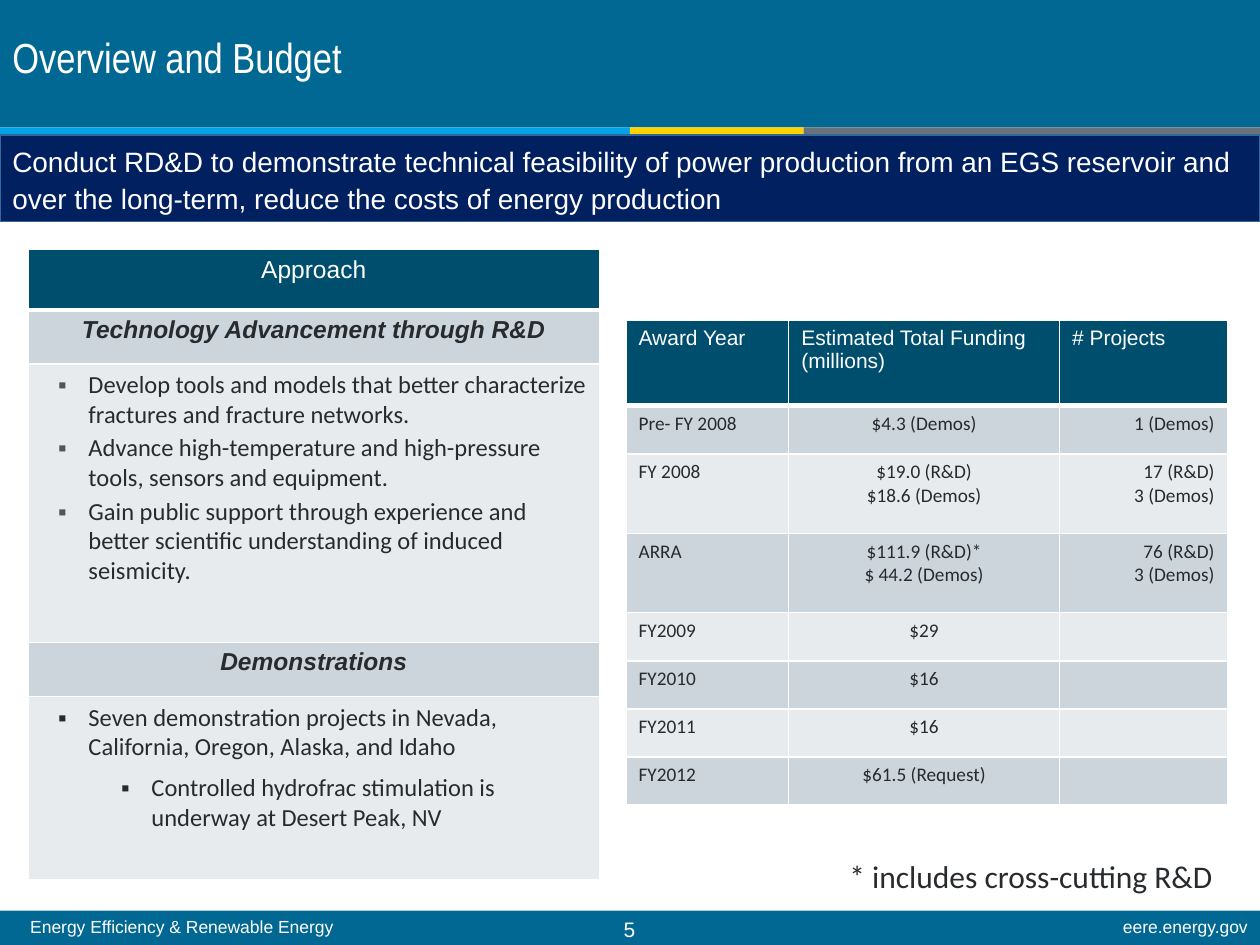
from lxml import etree
from pptx import Presentation
from pptx import util as u
from pptx.dml.color import RGBColor
from pptx.enum import shapes, text
from pptx.oxml.ns import qn

Cm, Pt = u.Cm, u.Pt
LEFT, CENTER, RIGHT = text.PP_ALIGN.LEFT, text.PP_ALIGN.CENTER, text.PP_ALIGN.RIGHT
WHITE, DARK, HEAD, BAND, PALE = "FFFFFF", "282B2E", "004E6E", "CCD4DC", "E7EBEE"


def color(value):
    return RGBColor.from_string(value)


def write(tf, lines, font, size, ink, align=LEFT, strong=False):
    tf.word_wrap = True
    for i, line in enumerate(lines):
        p = tf.paragraphs[0] if i == 0 else tf.add_paragraph()
        p.alignment = align
        if not line:
            p._p.get_or_add_endParaRPr().set("sz", str(size * 100))
            continue
        r = p.add_run()
        r.text = line
        r.font.name = font
        r.font.size = Pt(size)
        r.font.bold = r.font.italic = strong
        r.font.color.rgb = color(ink)


prs = Presentation()
prs.slide_width, prs.slide_height = Cm(25.4), Cm(19.05)
s = prs.slides.add_slide(prs.slide_layouts[6])

bars = [
    (0, 0, 25.4, 2.57, "006892"),
    (0, 18.36, 25.4, 0.69, "006892"),
    (0, 2.57, 12.7, 0.15, "00A4E4"),
    (12.7, 2.57, 3.5, 0.15, "FFD200"),
    (16.2, 2.57, 9.2, 0.15, "6A737B"),
    (0, 2.72, 25.4, 1.75, "002060"),
]
for x, y, w, h, fill in bars:
    sp = s.shapes.add_shape(shapes.MSO_SHAPE.RECTANGLE, Cm(x), Cm(y), Cm(w), Cm(h))
    sp.shadow.inherit = False
    sp.fill.solid()
    sp.fill.fore_color.rgb = color(fill)
    sp.line.fill.background()

sp.line.color.rgb = color("336699")
sp.line.width = Pt(0.75)
tf = sp.text_frame
tf.vertical_anchor = text.MSO_ANCHOR.TOP
write(tf, ["Conduct RD&D to demonstrate technical feasibility of power production from an EGS "
           "reservoir and over the long-term, reduce the costs of energy production"],
      "Arial", 16, WHITE)
tf.paragraphs[0].line_spacing = 1.1

labels = [
    (0, 0.15, 16.81, 2.03, "Overview and Budget", "Arial Narrow", 24, WHITE, LEFT, Pt(28)),
    (0.36, 18.39, 20.24, 0.66, "Energy Efficiency & Renewable Energy", "Arial", 10, WHITE, LEFT, 0.9),
    (15.21, 18.39, 10.19, 0.66, "eere.energy.gov", "Arial", 10, WHITE, RIGHT, 0.9),
    (9.73, 18.36, 5.92, 0.69, "5", "Arial", 12, WHITE, CENTER, 1.0),
    (16.81, 17.15, 7.95, 1.02, "* includes cross-cutting R&D", "Calibri", 18, DARK, CENTER, 1.0),
]
for x, y, w, h, line, font, size, ink, align, spacing in labels:
    tf = s.shapes.add_textbox(Cm(x), Cm(y), Cm(w), Cm(h)).text_frame
    write(tf, [line], font, size, ink, align)
    tf.paragraphs[0].line_spacing = spacing
    if size == 24:
        tf.vertical_anchor = text.MSO_ANCHOR.MIDDLE
    if size == 18:
        tf.word_wrap = False

approach = s.shapes.add_table(5, 1, Cm(0.56), Cm(5.03), Cm(11.53), Cm(12.7)).table
approach_rows = [
    (1.22, ["Approach"]),
    (1.09, ["Technology Advancement through R&D"]),
    (5.61, ["Develop tools and models that better characterize fractures and fracture networks.",
            "Advance high-temperature and high-pressure tools, sensors and equipment.",
            "Gain public support through experience and better scientific understanding of "
            "induced seismicity."]),
    (1.09, ["Demonstrations"]),
    (3.69, ["Seven demonstration projects in Nevada, California, Oregon, Alaska, and Idaho",
            "Controlled hydrofrac stimulation is underway at Desert Peak, NV"]),
]
for i, (height, lines) in enumerate(approach_rows):
    approach.rows[i].height = Cm(height)
    cell = approach.cell(i, 0)
    cell.margin_bottom = 0
    if i in (0, 1, 3):
        write(cell.text_frame, lines, "Arial", 14, DARK if i else WHITE, CENTER, i > 0)
        continue
    write(cell.text_frame, lines, "Calibri", 14, DARK)
    for j, p in enumerate(cell.text_frame.paragraphs):
        p.level = 1 if i == 4 and j else 0
        pPr = p._p.get_or_add_pPr()
        pPr.set("marL", str(Cm(0.97 + 1.27 * p.level)))
        pPr.set("indent", str(Cm(-0.61)))
        clr = etree.SubElement(pPr, qn("a:buClr"))
        etree.SubElement(clr, qn("a:srgbClr"), val="50565C" if i == 2 else DARK)
        etree.SubElement(pPr, qn("a:buFont"), typeface="Arial")
        etree.SubElement(pPr, qn("a:buChar"), char="▪")
        if j:
            p.space_before = Pt(2 if i == 2 else 6)

budget = s.shapes.add_table(8, 3, Cm(12.62), Cm(6.45), Cm(12.12), Cm(9.81)).table
for col, width in zip(budget.columns, (3.28, 5.46, 3.38)):
    col.width = Cm(width)
budget_rows = [
    (1.73, ["Award Year"], ["Estimated Total Funding (millions)"], ["# Projects"]),
    (0.97, ["Pre- FY 2008"], ["$4.3 (Demos)"], ["1 (Demos)"]),
    (1.6, ["FY 2008"], ["$19.0 (R&D)", "$18.6 (Demos)"], ["17 (R&D)", "3 (Demos)"]),
    (1.6, ["ARRA"], ["$111.9 (R&D)*", "$ 44.2 (Demos)"], ["76 (R&D)", "3 (Demos)"]),
    (0.97, ["FY2009"], ["$29"], [""]),
    (0.97, ["FY2010"], ["$16"], [""]),
    (0.97, ["FY2011"], ["$16"], [""]),
    (0.97, ["FY2012"], ["$61.5 (Request)"], [""]),
]
for i, (height, *entries) in enumerate(budget_rows):
    budget.rows[i].height = Cm(height)
    for j, lines in enumerate(entries):
        tf = budget.cell(i, j).text_frame
        if i == 0:
            write(tf, lines, "Arial", 12, WHITE)
        else:
            write(tf, lines, "Calibri", 11, DARK, (LEFT, CENTER, RIGHT)[j])

for table in (approach, budget):
    table.horz_banding = False
    for i, row in enumerate(table.rows):
        for cell in row.cells:
            tcPr = cell._tc.get_or_add_tcPr()
            for side in ("lnL", "lnR", "lnT", "lnB"):
                width = Pt(3 if i == 0 and side == "lnB" else 1)
                ln = etree.SubElement(tcPr, qn("a:" + side), w=str(width))
                fill = etree.SubElement(ln, qn("a:solidFill"))
                etree.SubElement(fill, qn("a:srgbClr"), val=WHITE)
            cell.fill.solid()
            cell.fill.fore_color.rgb = color(HEAD if i == 0 else BAND if i % 2 else PALE)

prs.save("out.pptx")
